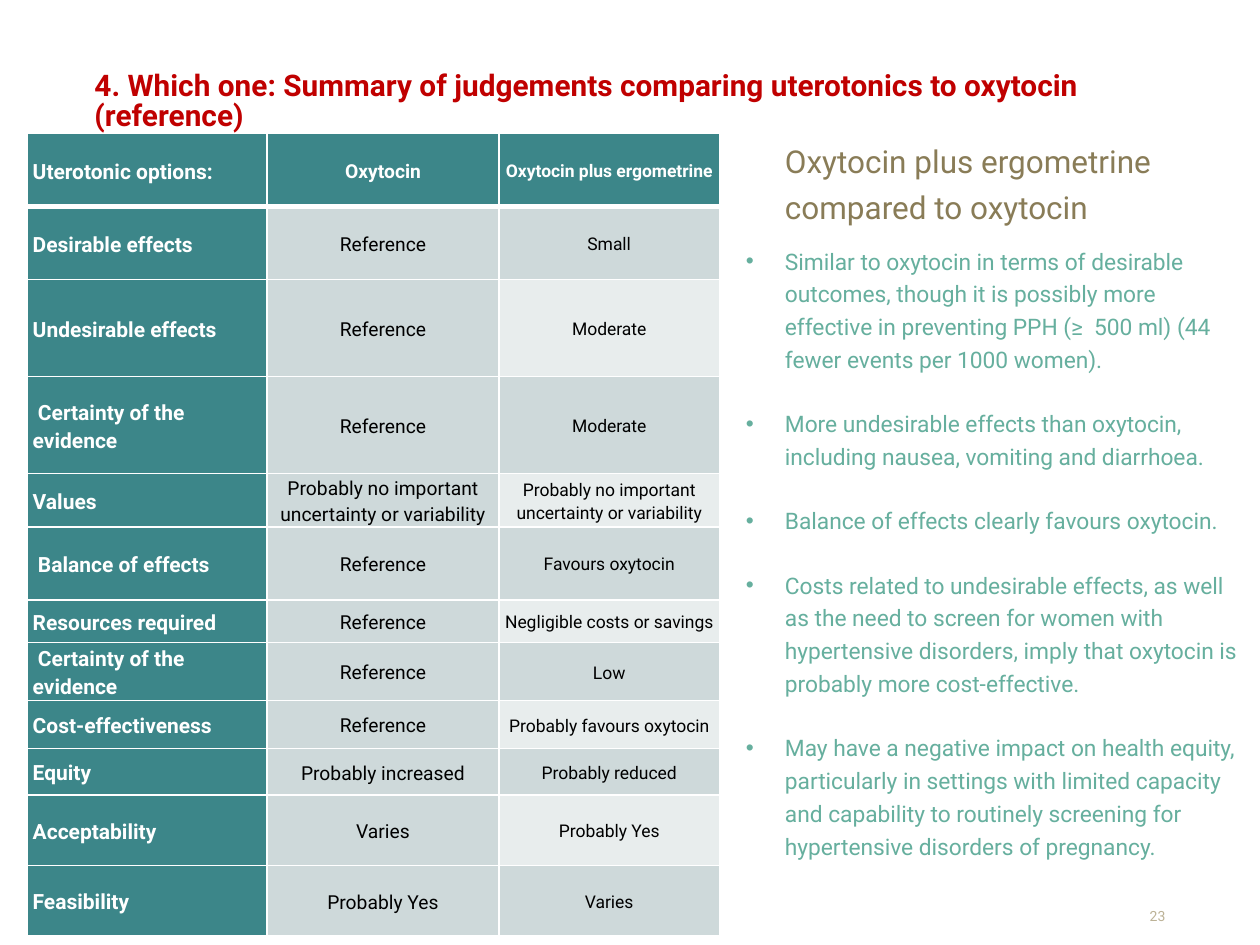
from lxml.etree import SubElement
from pptx import Presentation
from pptx.dml.color import RGBColor
from pptx.enum.text import MSO_ANCHOR as Anchor, PP_ALIGN as Align
from pptx.oxml.ns import qn
from pptx.util import Inches, Pt

WHITE, BLACK, TEAL = "FFFFFF", "000000", "3C8689"
DARK_BAND, LIGHT_BAND = "CED9DA", "E8EDED"

COLUMN_WIDTHS = [1.9, 1.84, 1.75]
COLUMN_SIZES = [12, 11, 10]
JUDGEMENTS = [
    (0.58, "Uterotonic options:", "Oxytocin", "Oxytocin plus ergometrine "),
    (0.58, "Desirable effects", "Reference", "Small"),
    (0.77, "Undesirable effects", "Reference", "Moderate"),
    (0.77, " Certainty of the evidence ", "Reference", "Moderate"),
    (0.42, "Values ", "Probably no important uncertainty or variability",
     "Probably no important uncertainty or variability"),
    (0.58, " Balance of effects", "Reference", "Favours oxytocin"),
    (0.34, "Resources required ", "Reference", "Negligible costs or savings"),
    (0.34, " Certainty of the evidence", "Reference", "Low"),
    (0.38, "Cost-effectiveness", "Reference", "Probably favours oxytocin"),
    (0.37, "Equity", "Probably increased", "Probably reduced"),
    (0.56, "Acceptability", "Varies", "Probably Yes"),
    (0.56, "Feasibility", "Probably Yes", "Varies"),
]
FINDINGS = [
    "Similar to oxytocin in terms of desirable outcomes, though it is possibly more "
    "effective in preventing PPH (≥  500 ml) (44 fewer events per 1000 women).",
    "More undesirable effects than oxytocin, including nausea, vomiting and diarrhoea.",
    "Balance of effects clearly favours oxytocin.",
    "Costs related to undesirable effects, as well as the need to screen for women with "
    "hypertensive disorders, imply that oxytocin is probably more cost-effective.",
    "May have a negative impact on health equity, particularly in settings with limited "
    "capacity and capability to routinely screening for hypertensive disorders of pregnancy.",
]


def color(hex_code):
    return RGBColor.from_string(hex_code)


class SlideBuilder:
    font = "Roboto"

    def __init__(self, slide):
        self.slide = slide

    def style(self, para, size, hex_code, bold=False, align=Align.LEFT, spacing=1.0):
        para.alignment = align
        para.line_spacing = spacing
        for span in para.runs:
            span.font.name = self.font
            span.font.size = Pt(size)
            span.font.bold = bold
            span.font.color.rgb = color(hex_code)

    def text(self, place, content, size, hex_code, anchor=Anchor.TOP, **look):
        box = self.slide.shapes.add_textbox(*map(Inches, place))
        frame = box.text_frame
        frame.word_wrap = True
        frame.vertical_anchor = anchor
        frame.margin_left = frame.margin_right = 0
        frame.margin_top = frame.margin_bottom = 0
        frame.text = content
        for para in frame.paragraphs:
            self.style(para, size, hex_code, **look)
        return frame

    def bullets(self, place, items, size, hex_code, **look):
        frame = self.text(place, "\n".join(items), size, hex_code, **look)
        for para in frame.paragraphs:
            para.space_before, para.space_after = Pt(6), Pt(12)
            properties = para._p.get_or_add_pPr()
            properties.set("marL", str(Inches(0.31)))
            properties.set("indent", str(-Inches(0.31)))
            SubElement(properties, qn("a:buFont"), typeface="Arial")
            SubElement(properties, qn("a:buChar"), char="•")

    def borders(self, cell, **widths):
        """Draw white cell borders; widths are points keyed by side: L, R, T, B."""
        properties = cell._tc.get_or_add_tcPr()
        for side, width in widths.items():
            line = SubElement(properties, qn(f"a:ln{side}"), w=str(Pt(width)))
            fill = SubElement(line, qn("a:solidFill"))
            SubElement(fill, qn("a:srgbClr"), val=WHITE)

    def cell(self, cell, content, fill, size, hex_code, **look):
        cell.margin_left = cell.margin_right = Inches(0.04)
        cell.margin_top = cell.margin_bottom = 0
        cell.vertical_anchor = Anchor.MIDDLE
        cell.fill.solid()
        cell.fill.fore_color.rgb = color(fill)
        cell.text = content
        self.style(cell.text_frame.paragraphs[0], size, hex_code, spacing=1.15, **look)

    def judgement_table(self, left, top, rows):
        heights = [row[0] for row in rows]
        place = left, top, sum(COLUMN_WIDTHS), sum(heights)
        table = self.slide.shapes.add_table(
            len(rows), len(COLUMN_WIDTHS), *map(Inches, place)).table
        for column, width in zip(table.columns, COLUMN_WIDTHS):
            column.width = Inches(width)
        for r, (height, *labels) in enumerate(rows):
            table.rows[r].height = Inches(height)
            for c, label in enumerate(labels):
                heading = r == 0 or c == 0
                band = LIGHT_BAND if c == 2 and r % 2 == 0 else DARK_BAND
                cell = table.cell(r, c)
                self.borders(cell, L=1, R=1, T=3 if r == 1 else 1, B=3 if r == 0 else 1)
                self.cell(cell, label, TEAL if heading else band, COLUMN_SIZES[c],
                          WHITE if heading else BLACK, bold=heading,
                          align=Align.CENTER if c else Align.LEFT)


def main():
    deck = Presentation()
    deck.slide_width, deck.slide_height = Inches(10), Inches(7.5)
    page = SlideBuilder(deck.slides.add_slide(deck.slide_layouts[6]))

    page.text((8.93, 7.21, 0.32, 0.13), "23", 8, "BCB296",
              anchor=Anchor.BOTTOM, align=Align.RIGHT)
    page.judgement_table(0.22, 1.06, JUDGEMENTS)
    page.text((0.75, 0.57, 8.5, 0.49),
              "4. Which one: Summary of judgements comparing uterotonics to oxytocin (reference)",
              17, "C00000", bold=True, spacing=0.85)
    page.text((6.23, 1.07, 3.61, 0.69), "Oxytocin plus ergometrine compared to oxytocin",
              18, "897C57", spacing=1.2)
    page.bullets((5.92, 1.92, 3.91, 2.37), FINDINGS, 13, "66AF9E", spacing=1.2)

    deck.save("out.pptx")


if __name__ == "__main__":
    main()
